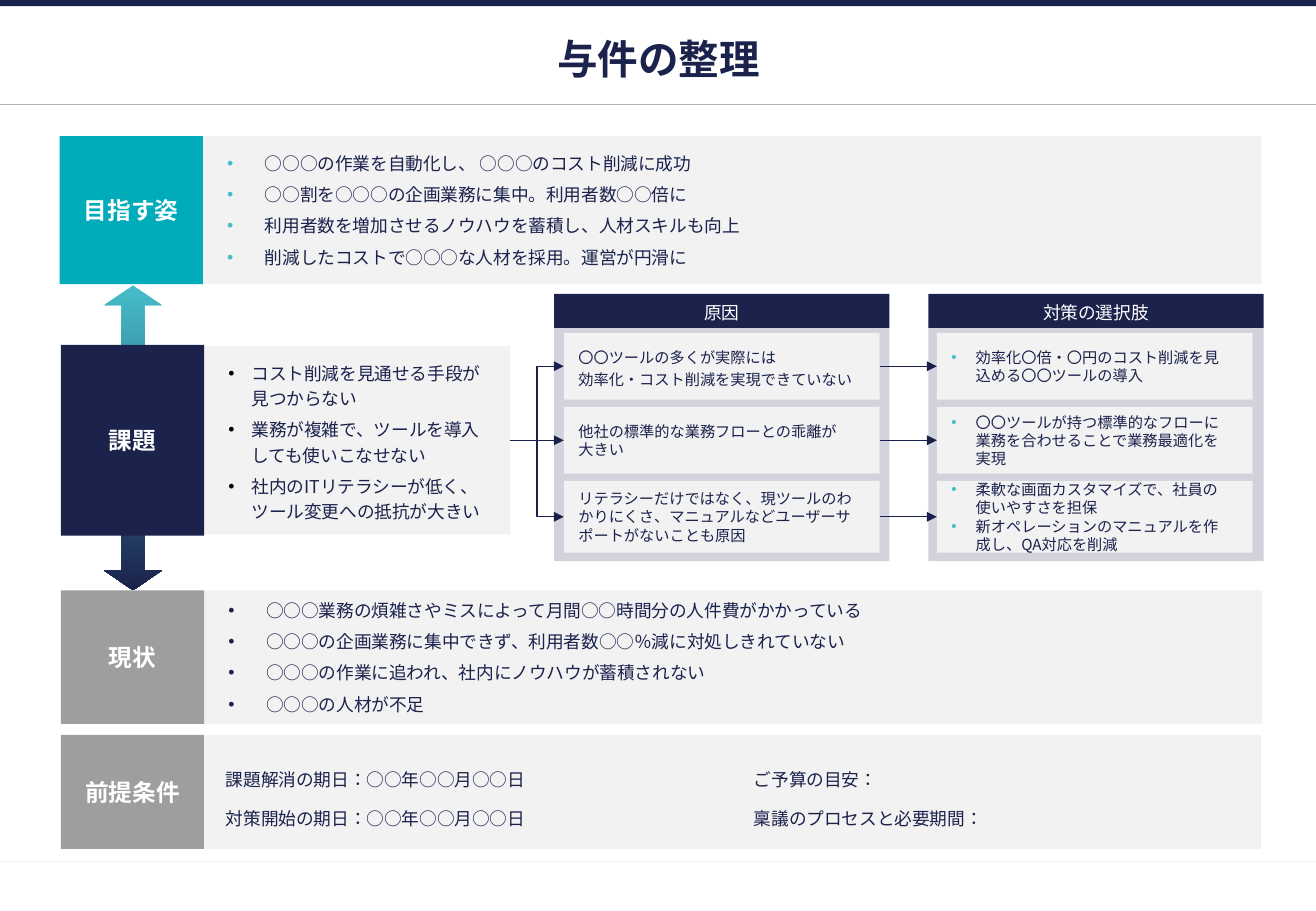
from copy import deepcopy

from lxml import etree
from pptx import Presentation
from pptx import util as u
from pptx.dml.color import RGBColor
from pptx.enum import lang, shapes, text
from pptx.oxml.ns import qn

FONT = "Noto Sans CJK JP"
NAVY = RGBColor(0x1B, 0x22, 0x4C)
LINK = RGBColor(0x19, 0x20, 0x4C)
TEAL = RGBColor(0x00, 0xAC, 0xBA)
AQUA = RGBColor(0x46, 0xBD, 0xCA)
GREY = RGBColor(0x9E, 0x9E, 0x9E)
RULE = RGBColor(0xAF, 0xAF, 0xAF)
PALE = RGBColor(0xF2, 0xF2, 0xF2)
WHITE = RGBColor(0xFF, 0xFF, 0xFF)
BLACK = RGBColor(0x00, 0x00, 0x00)

# Content
TITLE = "与件の整理"
GOALS = [
    "○○○の作業を自動化し、 ○○○のコスト削減に成功",
    "○○割を○○○の企画業務に集中。利用者数○○倍に",
    "利用者数を増加させるノウハウを蓄積し、人材スキルも向上",
    "削減したコストで○○○な人材を採用。運営が円滑に",
]
ISSUES = [
    "コスト削減を見通せる手段が見つからない",
    "業務が複雑で、ツールを導入しても使いこなせない",
    "社内のITリテラシーが低く、ツール変更への抵抗が大きい",
]
STATUS = [
    "○○○業務の煩雑さやミスによって月間○○時間分の人件費がかかっている",
    "○○○の企画業務に集中できず、利用者数○○％減に対処しきれていない",
    "○○○の作業に追われ、社内にノウハウが蓄積されない",
    "○○○の人材が不足",
]
CONDITIONS = [
    ["課題解消の期日：○○年○○月○○日", "対策開始の期日：○○年○○月○○日"],
    ["ご予算の目安：", "稟議のプロセスと必要期間："],
]
CAUSES = [
    "〇〇ツールの多くが実際には\n効率化・コスト削減を実現できていない",
    "他社の標準的な業務フローとの乖離が\n大きい",
    "リテラシーだけではなく、現ツールのわかりにくさ、"
    "マニュアルなどユーザーサポートがないことも原因",
]
OPTIONS = [
    ["効率化〇倍・〇円のコスト削減を見込める〇〇ツールの導入"],
    ["〇〇ツールが持つ標準的なフローに業務を合わせることで業務最適化を実現"],
    ["柔軟な画面カスタマイズで、社員の使いやすさを担保",
     "新オペレーションのマニュアルを作成し、QA対応を削減"],
]

# Layout: label (text, left, top, height, colour), panel (left, top, width, height)
LABEL_WIDTH = 1.18
LABELS = [
    ("目指す姿", 0.49, 1.12, 1.22, TEAL),
    ("課題", 0.5, 2.84, 1.57, NAVY),
    ("現状", 0.5, 4.86, 1.1, GREY),
    ("前提条件", 0.5, 6.05, 0.94, GREY),
]
PANELS = {"goals": (1.67, 1.12, 8.71, 1.22), "issues": (1.68, 2.85, 2.52, 1.55),
          "status": (1.68, 4.86, 8.71, 1.1)}
ROWS = [(2.74, 0.55), (3.35, 0.55), (3.96, 0.59)]
COLUMN_WIDTH, CARD_WIDTH = 2.76, 2.6
PANEL_INSETS = (0.2, 0.12, 0.2, 0.12)
CARD_INSETS = (0.12, 0.12, 0.2, 0.12)
SPACED = dict(space_before=u.Pt(6))
LOOSE = dict(line_spacing=1.2, space_after=u.Pt(3.2))

deck = Presentation()
deck.slide_width, deck.slide_height = u.Inches(10.83), u.Inches(7.5)
page = deck.slides.add_slide(deck.slide_layouts[5])


def apply(target, values):
    for name, value in values.items():
        setattr(target, name, value)


def inches(values):
    return [u.Inches(value) for value in values]


def add_box(area, colour, kind=shapes.MSO_SHAPE.RECTANGLE):
    box = page.shapes.add_shape(kind, *inches(area))
    box.shadow.inherit = False
    box.line.fill.background()
    if colour is not None:
        box.fill.solid()
        box.fill.fore_color.rgb = colour
    return box


def add_bullet(para, colour, indent):
    props = para._p.get_or_add_pPr()
    props.set("marL", str(u.Inches(indent)))
    props.set("indent", str(-u.Inches(indent)))
    tint = etree.SubElement(props, qn("a:buClr"))
    etree.SubElement(tint, qn("a:srgbClr"), val=str(colour))
    etree.SubElement(props, qn("a:buFont"), typeface="Arial")
    etree.SubElement(props, qn("a:buChar"), char="•")


def write(frame, lines, size, colour=NAVY, bold=False, align=text.PP_ALIGN.LEFT,
          bullet=None, **spacing):
    for index, line in enumerate(lines):
        para = frame.add_paragraph() if index else frame.paragraphs[0]
        para.text = line
        para.alignment = align
        if bullet:
            add_bullet(para, *bullet)
        apply(para, spacing)
        if index == 0 and "space_before" in spacing:
            para.space_before = u.Pt(0)
        for span in para.runs:
            apply(span.font, dict(name=FONT, size=u.Pt(size), bold=bold,
                                  language_id=lang.MSO_LANGUAGE_ID.JAPANESE))
            span.font.color.rgb = colour
            props = span._r.get_or_add_rPr()
            props.find(qn("a:latin")).addnext(
                props.makeelement(qn("a:ea"), {"typeface": FONT}))
        for line_break in para._p.findall(qn("a:br")):
            line_break.insert(0, deepcopy(para.runs[0]._r.rPr))


def fill_text(box, lines, size, insets, **style):
    left, top, right, bottom = inches(insets)
    apply(box.text_frame, dict(
        word_wrap=True, auto_size=text.MSO_AUTO_SIZE.NONE,
        vertical_anchor=text.MSO_ANCHOR.MIDDLE, margin_left=left,
        margin_top=top, margin_right=right, margin_bottom=bottom))
    write(box.text_frame, lines, size, **style)


def add_line(start, end, colour, kind=shapes.MSO_CONNECTOR.STRAIGHT):
    line = page.shapes.add_connector(kind, *inches(start + end))
    line.line.color.rgb = colour
    line.line.width = u.Pt(0.75)
    etree.SubElement(line._element.spPr, qn("a:effectLst"))
    return line


def link(source, target, kind=shapes.MSO_CONNECTOR.STRAIGHT):
    arrow = add_line((0, 0), (1, 1), LINK, kind)
    arrow.begin_connect(source, 3)
    arrow.end_connect(target, 1)
    etree.SubElement(arrow.line._get_or_add_ln(), qn("a:tailEnd"), type="triangle")


# Page frame and title
add_line((0, 7.09), (10.83, 7.09), PALE)
add_box((0, 0, 10.83, 0.05), NAVY)
add_line((0, 0.86), (10.83, 0.86), RULE)
title = page.shapes.title
apply(title, dict(zip(("left", "top", "width", "height"),
                      inches((0.5, 0.29, 9.84, 0.39)))))
fill_text(title, [TITLE], 24, (0.04, 0.04, 0.04, 0.05), bold=True,
          align=text.PP_ALIGN.CENTER)

# Two-way arrow behind the labels
arrow = add_box((-0.16, 3.37, 2.51, 0.47), None, shapes.MSO_SHAPE.LEFT_RIGHT_ARROW)
arrow.rotation = 270
arrow.adjustments[0], arrow.adjustments[1] = 0.397, 0.345
arrow.fill.gradient()
arrow.fill.gradient_angle = 180
for stop, colour in zip(arrow.fill.gradient_stops, (AQUA, NAVY)):
    stop.color.rgb = colour

# List panels
panels = {name: add_box(area, PALE) for name, area in PANELS.items()}
fill_text(panels["goals"], GOALS, 10.5, PANEL_INSETS, bullet=(AQUA, 0.31), **SPACED)
fill_text(panels["issues"], ISSUES, 10.5, PANEL_INSETS, bullet=(BLACK, 0.19), **LOOSE)
fill_text(panels["status"], STATUS, 10.5, PANEL_INSETS, bullet=(NAVY, 0.31), **SPACED)

# Conditions table
table = page.shapes.add_table(1, 2, *inches((1.69, 6.05, 8.69, 0.94))).table
table.first_row = table.horz_banding = False
table._tbl.tblPr.find(qn("a:tableStyleId")).text = "{2D5ABB26-0587-4C30-8999-92F81FD0307C}"
for cell, lines in zip(table.rows[0].cells, CONDITIONS):
    cell.fill.solid()
    cell.fill.fore_color.rgb = PALE
    apply(cell, dict(vertical_anchor=text.MSO_ANCHOR.MIDDLE, margin_left=u.Inches(0.17)))
    write(cell.text_frame, lines, 10.5, line_spacing=1.5)

# Cause and option columns
cards = {}
for heading, left, card_left in (("原因", 4.56, 4.64), ("対策の選択肢", 7.64, 7.71)):
    back = add_box((left, 2.69, COLUMN_WIDTH, 1.93), NAVY)
    tint = back._element.spPr.find(".//" + qn("a:srgbClr"))
    etree.SubElement(tint, qn("a:alpha"), val="20000")
    header = add_box((left, 2.42, COLUMN_WIDTH, 0.28), NAVY)
    fill_text(header, [heading], 10.5, (0.1, 0.08, 0.1, 0.05), colour=WHITE,
              align=text.PP_ALIGN.CENTER)
    cards[heading] = [add_box((card_left, top, CARD_WIDTH, height), PALE)
                      for top, height in ROWS]
for index, (cause, option) in enumerate(zip(*cards.values())):
    fill_text(cause, [CAUSES[index]], 9, CARD_INSETS, **({} if index else LOOSE))
    fill_text(option, OPTIONS[index], 9, CARD_INSETS, bullet=(AQUA, 0.2))
    bend = shapes.MSO_CONNECTOR.STRAIGHT if index == 1 else shapes.MSO_CONNECTOR.ELBOW
    link(panels["issues"], cause, bend)
    link(cause, option)

# Section labels
for label, left, top, height, colour in LABELS:
    box = add_box((left, top, LABEL_WIDTH, height), colour)
    fill_text(box, [label], 14, (0.1, 0.05, 0.1, 0.05), colour=WHITE, bold=True,
              align=text.PP_ALIGN.CENTER)

deck.save("out.pptx")
